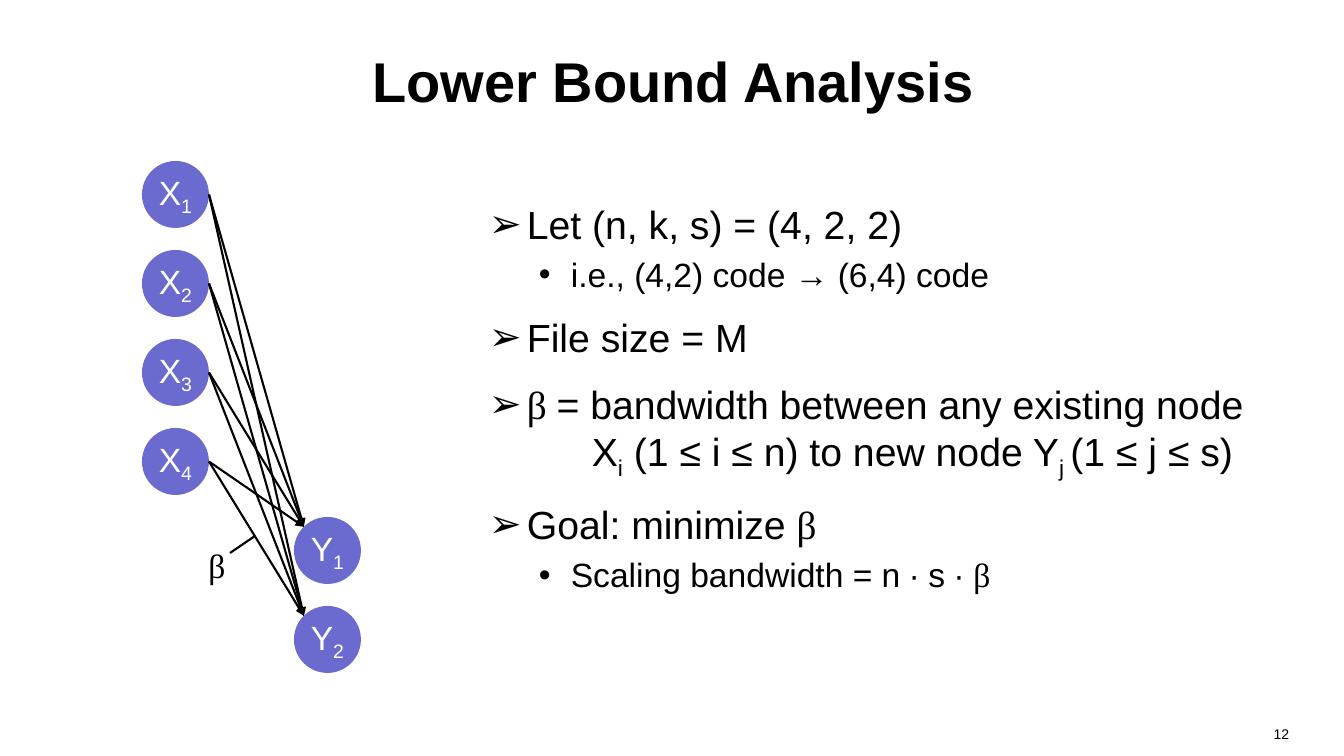
from math import cos, pi
from lxml.etree import SubElement
from pptx import Presentation
from pptx.dml.color import RGBColor
from pptx.enum.shapes import MSO_CONNECTOR as Connector, MSO_SHAPE as Preset
from pptx.enum.text import MSO_ANCHOR as Anchor, PP_ALIGN as Align
from pptx.oxml.ns import qn
from pptx.util import Emu, Pt

# Content: a run is (text, style); styles are "", "sub" and "greek"
TITLE = "Lower Bound Analysis"
PAGE_NUMBER = "12"
BODY = [
    ("point", [("Let (n, k, s) = (4, 2, 2)", "")]),
    ("detail", [("i.e., (4,2) code → (6,4) code", "")]),
    ("point", [("File size = M", "")]),
    ("point", [("β ", "greek"), ("= bandwidth between any existing node", "")]),
    ("continued", [("X", ""), ("i", "sub"), (" (1 ≤ i ≤ n) to new node Y", ""),
                   ("j ", "sub"), ("(1 ≤ j ≤ s)", "")]),
    ("point", [("Goal: minimize ", ""), ("β", "greek")]),
    ("detail", [("Scaling bandwidth = n ∙ s ∙ ", ""), ("β", "greek")]),
]
# Level: size in pt, space before in pt, left margin px, first-line indent px, bullet
LEVELS = {
    "point": (28, 14, 38, -38, "➢"),
    "detail": (24, 4.8, 82, -32, "•"),
    "continued": (28, 0, 103, 0, None),
}
EXISTING_NODES = ["1", "2", "3", "4"]
NEW_NODES = ["1", "2"]

# Layout in px
SLIDE_WIDTH, SLIDE_HEIGHT = 1344, 756
TITLE_BOX = (68, 17, 1210, 126)
BODY_BOX = (479, 195, 798, 480)
NUMBER_BOX = (986, 721, 313, 35)
BETA_BOX = (182, 540, 70, 50)
BETA_TICK = (255, 536, 230, 553)
EXISTING_LEFT, NEW_LEFT = 142, 294
NODE_TOP, NODE_PITCH, NODE_SIZE = 161, 89, 67

BLACK = RGBColor(0x00, 0x00, 0x00)
WHITE = RGBColor(0xFF, 0xFF, 0xFF)
VIOLET = RGBColor(0x6B, 0x6B, 0xCF)
EMU_PER_PX = 914400 / 100.8


def px(length):
    return Emu(round(length * EMU_PER_PX))


def add_runs(paragraph, runs, size, color=BLACK, bold=False):
    for text, style in runs:
        run = paragraph.add_run()
        run.text = text
        run.font.name = "Times New Roman" if style == "greek" else "Arial"
        run.font.size = Pt(size)
        run.font.bold = bold
        run.font.color.rgb = color
        if style == "sub":
            run.font._element.set("baseline", "-25000")


def add_text_box(slide, box, anchor=Anchor.TOP):
    frame = slide.shapes.add_textbox(*map(px, box)).text_frame
    frame.word_wrap = True
    frame.vertical_anchor = anchor
    return frame


def add_line(slide, ends, arrow=False):
    line = slide.shapes.add_connector(Connector.STRAIGHT, *map(px, ends))
    line.line.color.rgb = BLACK
    line.line.width = Pt(1.5)
    if arrow:
        SubElement(line.line._get_or_add_ln(), qn("a:tailEnd"), type="triangle")
    SubElement(line._element.spPr, qn("a:effectLst"))


def add_node(slide, letter, index, left, row):
    top = NODE_TOP + row * NODE_PITCH
    node = slide.shapes.add_shape(
        Preset.OVAL, px(left), px(top), px(NODE_SIZE), px(NODE_SIZE))
    node.shadow.inherit = False
    node.fill.solid()
    node.fill.fore_color.rgb = VIOLET
    node.line.fill.background()
    frame = node.text_frame
    frame.word_wrap = False
    frame.margin_left = frame.margin_right = 0
    frame.margin_top = frame.margin_bottom = 0
    frame.vertical_anchor = Anchor.MIDDLE
    paragraph = frame.paragraphs[0]
    paragraph.alignment = Align.CENTER
    add_runs(paragraph, [(letter, ""), (index, "sub")], 24, WHITE)
    return left, top


def add_body(slide):
    frame = add_text_box(slide, BODY_BOX)
    for number, (level, runs) in enumerate(BODY):
        size, space, margin, indent, bullet = LEVELS[level]
        paragraph = frame.add_paragraph() if number else frame.paragraphs[0]
        paragraph.space_before = Pt(space if number else 0)
        properties = paragraph._p.get_or_add_pPr()
        properties.set("marL", str(px(margin)))
        properties.set("indent", str(px(indent)))
        if bullet:
            SubElement(properties, qn("a:buFont"), typeface="Arial")
            SubElement(properties, qn("a:buChar"), char=bullet)
        else:
            SubElement(properties, qn("a:buNone"))
        add_runs(paragraph, runs, size)


def add_diagram(slide):
    # Nodes: both columns share one vertical rhythm
    sources = [add_node(slide, "X", index, EXISTING_LEFT, row)
               for row, index in enumerate(EXISTING_NODES)]
    targets = [add_node(slide, "Y", index, NEW_LEFT, row)
               for row, index in enumerate(NEW_NODES, len(EXISTING_NODES))]

    # Arrows: right side of each X to the upper left rim of each Y
    radius = NODE_SIZE / 2
    rim = radius * (1 - cos(pi / 4))
    for target_left, target_top in targets:
        for left, top in sources:
            add_line(slide, (left + NODE_SIZE, top + radius,
                             target_left + rim, target_top + rim), arrow=True)

    # Bandwidth label
    paragraph = add_text_box(slide, BETA_BOX).paragraphs[0]
    paragraph.alignment = Align.CENTER
    add_runs(paragraph, [("β", "greek")], 24)
    add_line(slide, BETA_TICK)


def main():
    presentation = Presentation()
    presentation.slide_width = px(SLIDE_WIDTH)
    presentation.slide_height = px(SLIDE_HEIGHT)
    slide = presentation.slides.add_slide(presentation.slide_layouts[6])

    # Title
    paragraph = add_text_box(slide, TITLE_BOX, Anchor.MIDDLE).paragraphs[0]
    paragraph.alignment = Align.CENTER
    add_runs(paragraph, [(TITLE, "")], 40, bold=True)

    add_body(slide)

    # Page number
    paragraph = add_text_box(slide, NUMBER_BOX).paragraphs[0]
    paragraph.alignment = Align.RIGHT
    add_runs(paragraph, [(PAGE_NUMBER, "")], 10)

    add_diagram(slide)
    presentation.save("out.pptx")


if __name__ == "__main__":
    main()
